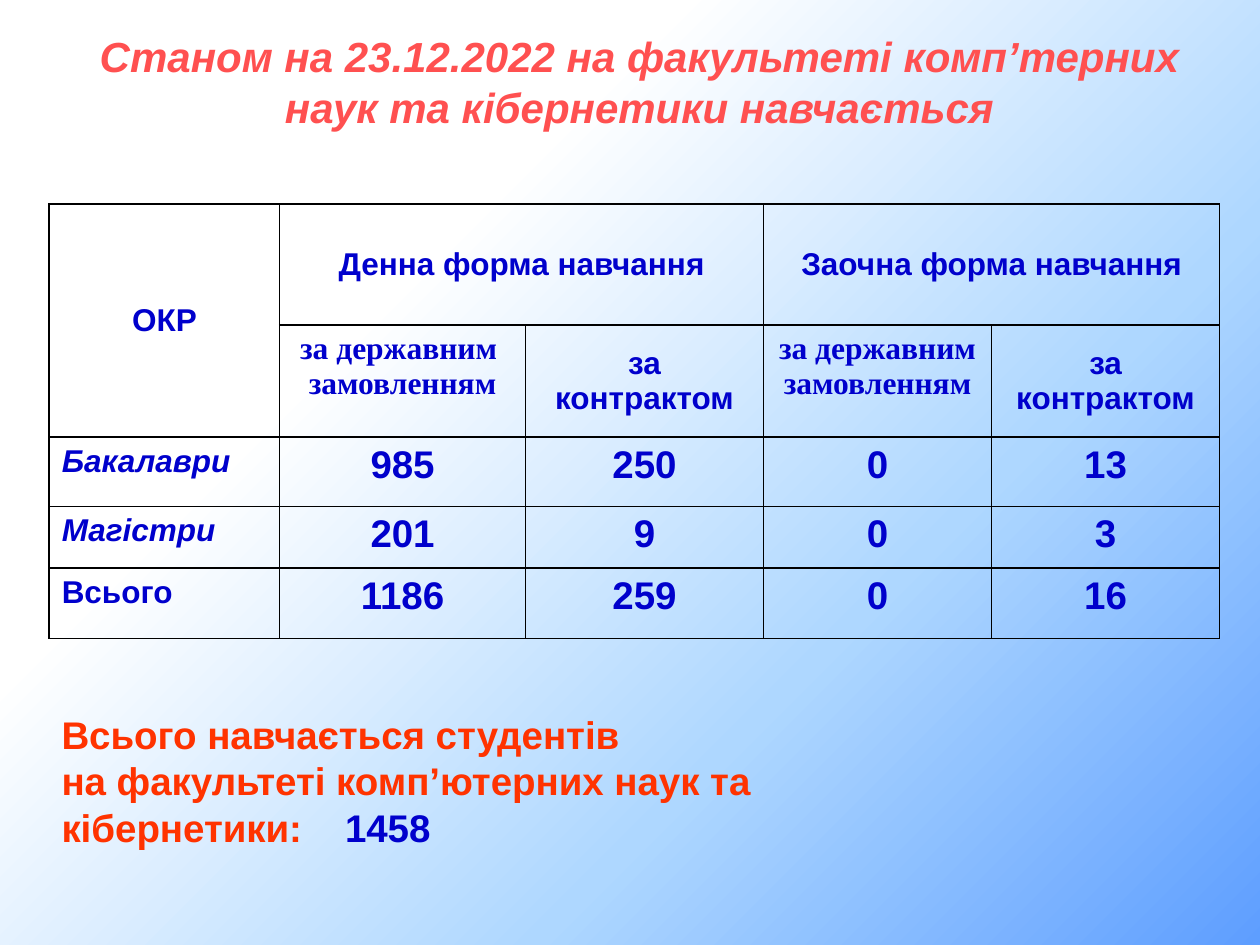
from pptx import Presentation
from pptx.dml.color import RGBColor
from pptx.enum.text import MSO_ANCHOR, MSO_AUTO_SIZE, PP_ALIGN
from pptx.oxml import parse_xml
from pptx.oxml.ns import nsdecls, qn
from pptx.util import Inches, Pt

CENTER, LEFT = PP_ALIGN.CENTER, PP_ALIGN.LEFT
MIDDLE, TOP = MSO_ANCHOR.MIDDLE, MSO_ANCHOR.TOP
FIT_SHAPE = MSO_AUTO_SIZE.SHAPE_TO_FIT_TEXT
COLORS = {"title": "FF5050", "total": "FF3300", "table": "0000CC", "border": "000000"}
GRADIENT = [(0, "5E9EFF", 52), (33, "AED7FF", 70), (69, "FFFFFF", 100), (100, "FFFFFF", 0)]


def format_runs(para, size, color, font="Arial", italic=False):
    for span in para.runs:
        span.font.name = font
        span.font.size = Pt(size)
        span.font.bold = True
        span.font.italic = italic
        span.font.color.rgb = RGBColor.from_string(COLORS[color])


def add_text_box(page, left, top, width, height, text):
    box = page.shapes.add_textbox(Inches(left), Inches(top), Inches(width), Inches(height))
    frame = box.text_frame
    frame.text = text
    frame.word_wrap = True
    frame.auto_size = FIT_SHAPE
    frame.vertical_anchor = MIDDLE
    return frame


deck = Presentation()
deck.slide_width, deck.slide_height = Inches(10), Inches(7.5)
page = deck.slides.add_slide(deck.slide_layouts[6])

page.background.fill.gradient()
old_gradient = page._element.find(".//" + qn("a:gradFill"))
stops = "".join(
    f'<a:gs pos="{pos * 1000}"><a:srgbClr val="{color}"><a:alpha val="{alpha * 1000}"/></a:srgbClr></a:gs>'
    for pos, color, alpha in GRADIENT
)
old_gradient.getparent().replace(old_gradient, parse_xml(
    f'<a:gradFill {nsdecls("a")} rotWithShape="1"><a:gsLst>{stops}</a:gsLst>'
    '<a:path path="circle"><a:fillToRect l="100000" t="100000"/></a:path>'
    '<a:tileRect r="-100000" b="-100000"/></a:gradFill>'
))

rows = [
    ["ОКР", "Денна форма навчання", "", "Заочна форма навчання", ""],
    ["", "за державним \nзамовленням", "за контрактом", "за державним\nзамовленням", "за контрактом"],
    ["Бакалаври", "985", "250", "0", "13"],
    ["Магістри", "201", "9", "0", "3"],
    ["Всього", "1186", "259", "0", "16"],
]
column_widths = [1.83, 1.95, 1.89, 1.81, 1.81]
row_heights = [0.96, 0.89, 0.55, 0.49, 0.56]
table = page.shapes.add_table(
    len(rows), len(column_widths), Inches(0.39), Inches(1.62), Inches(9.29), Inches(3.45)
).table
table.first_row = False
table.horz_banding = False
for column, width in zip(table.columns, column_widths):
    column.width = Inches(width)
for row, height in zip(table.rows, row_heights):
    row.height = Inches(height)

for r, texts in enumerate(rows):
    for c, text in enumerate(texts):
        cell = table.cell(r, c)
        properties = cell._tc.get_or_add_tcPr()
        for side in ("lnL", "lnR", "lnT", "lnB"):
            properties.append(parse_xml(
                f'<a:{side} {nsdecls("a")} w="12700"><a:solidFill>'
                f'<a:srgbClr val="{COLORS["border"]}"/></a:solidFill></a:{side}>'
            ))
        cell.fill.background()
        two_lines = "\n" in text
        cell.vertical_anchor = MIDDLE if r < 2 and not two_lines else TOP
        cell.text_frame.text = text
        for para in cell.text_frame.paragraphs:
            para.alignment = LEFT if c == 0 and r > 1 else CENTER
            if text != "за контрактом":
                para_properties = para._p.get_or_add_pPr()
                para_properties.set("marL", str(Inches(0.38)))
                para_properties.set("indent", str(-Inches(0.38)))
            format_runs(
                para,
                22 if r > 1 and c > 0 else 18,
                "table",
                "Times New Roman" if two_lines else "Arial",
                c == 0 and r in (2, 3),
            )

for first, last in [((0, 0), (1, 0)), ((0, 1), (0, 2)), ((0, 3), (0, 4))]:
    table.cell(*first).merge(table.cell(*last))

title = add_text_box(
    page, 0.47, 0.19, 9.21, 0.91,
    "Станом на 23.12.2022 на факультеті комп’терних наук та кібернетики навчається",
).paragraphs[0]
title.alignment = CENTER
format_runs(title, 24, "title", italic=True)

total = add_text_box(
    page, 0.39, 5.59, 5.83, 1.21,
    "Всього навчається студентів\nна факультеті комп’ютерних наук та кібернетики:",
)
for para in total.paragraphs:
    format_runs(para, 22, "total")
count_line = total.paragraphs[1]
count_line._p.get_or_add_pPr().append(parse_xml(
    f'<a:tabLst {nsdecls("a")}><a:tab pos="{Inches(2.25)}" algn="l"/></a:tabLst>'
))
count = count_line.add_run()
count.text = "\t1458"
count.font.name = "Arial"
count.font.size = Pt(22)
count.font.bold = True
count.font.color.rgb = RGBColor.from_string(COLORS["table"])

deck.save("out.pptx")
